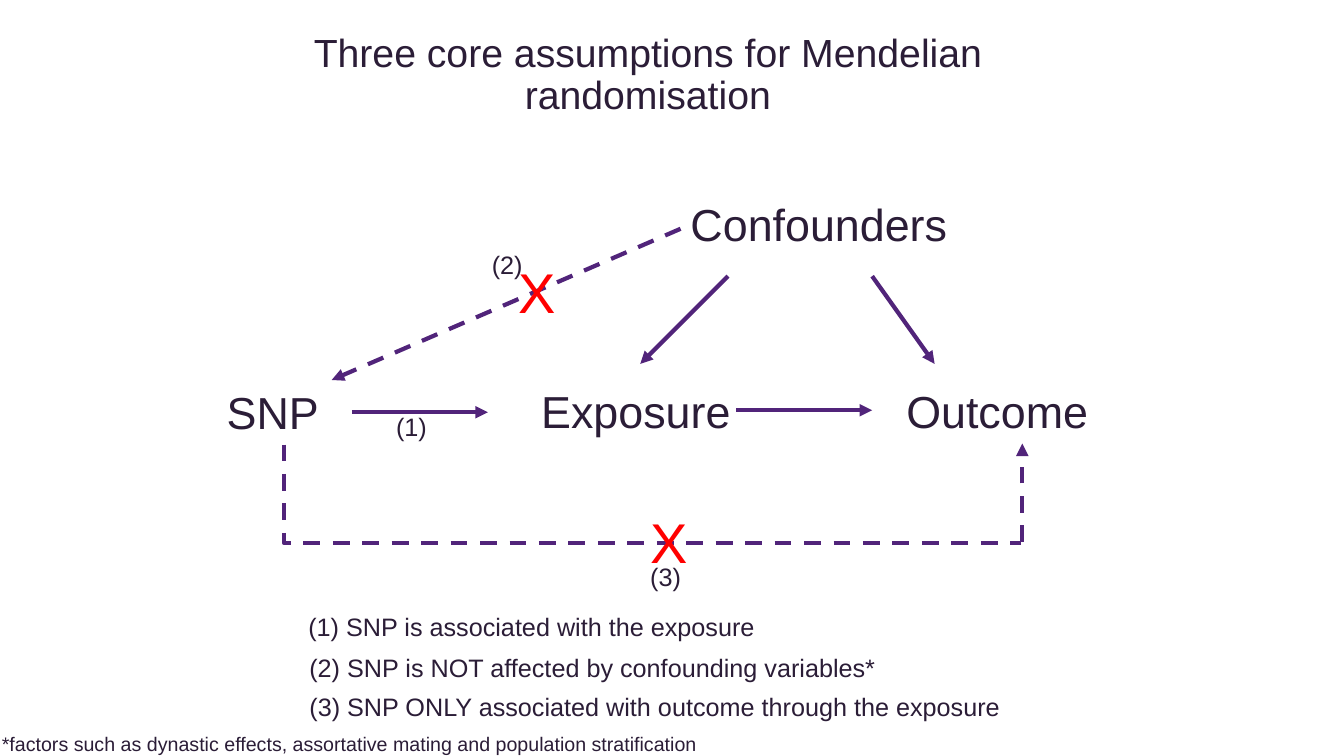
"""Build a slide showing the three core assumptions for Mendelian randomisation."""
import pptx
import pptx.dml.color
import pptx.enum.dml
import pptx.enum.shapes
import pptx.enum.text
import pptx.oxml
import pptx.oxml.ns
import pptx.util
from pptx.util import Inches

TITLE = ("Three core assumptions for Mendelian randomisation", 1.94, 0.33, 8.97, 1.25)
VARIABLES = [
    ("SNP", 2.15, 3.77, 1.34, 0.64),
    ("Exposure", 5.27, 3.76, 2.26, 0.64),
    ("Outcome", 8.89, 3.76, 2.11, 0.64),
    ("Confounders", 6.75, 1.9, 3.08, 0.64),
]
CAUSAL_ARROWS = [
    ((3.49, 4.09), (4.84, 4.09)),
    ((7.3, 4.07), (8.65, 4.07)),
    ((7.22, 2.74), (6.35, 3.61)),
    ((8.65, 2.74), (9.27, 3.61)),
]
RULED_OUT_ARROWS = [
    ((6.75, 2.27), (3.29, 3.77)),
    ((10.14, 5.38), (10.14, 4.4)),
]
RULED_OUT_BEND = [(2.82, 4.41), (2.82, 5.39), (10.13, 5.39)]
NOTES = [
    ("(1) SNP is associated with the exposure", 2.96, 6.02, 4.67, 0.4),
    ("(2) SNP is NOT affected by confounding variables*", 2.97, 6.42, 5.87, 0.4),
    ("(3) SNP ONLY associated with outcome through the exposure", 2.97, 6.81, 7.12, 0.4),
    ("(2)", 4.78, 2.42, 0.51, 0.4),
    ("(1)", 3.83, 4.03, 0.51, 0.4),
    ("(3)", 6.35, 5.52, 0.51, 0.4),
]
CROSSES = [("X", 5.04, 2.51, 0.49, 0.77), ("X", 6.35, 4.99, 0.49, 0.77)]
FOOTNOTE = (
    "*factors such as dynastic effects, assortative mating and population stratification",
    -0.08, 7.21, 7.13, 0.34,
)

THEME = {
    "font": "Arial",
    "ink": "2B1D37",
    "arrow": "51247A",
    "cross": "FF0000",
    "title_size": 28,
    "variable_size": 32,
    "note_size": 18,
    "cross_size": 40,
    "footnote_size": 14,
    "line_width": 3,
}


def rgb(name):
    return pptx.dml.color.RGBColor.from_string(THEME[name])


def add_label(slide, label, size, color="ink", wrap=False):
    text, left, top, width, height = label
    box = slide.shapes.add_textbox(*map(Inches, (left, top, width, height)))
    box.text_frame.word_wrap = wrap
    paragraph = box.text_frame.paragraphs[0]
    paragraph.text = text
    paragraph.font.name = THEME["font"]
    paragraph.font.size = pptx.util.Pt(THEME[size])
    paragraph.font.color.rgb = rgb(color)
    return box.text_frame


def style_line(line, dashed):
    line.color.rgb = rgb("arrow")
    line.width = pptx.util.Pt(THEME["line_width"])
    if dashed:
        line.dash_style = pptx.enum.dml.MSO_LINE.DASH


def add_arrow(slide, start, end, dashed=False):
    arrow = slide.shapes.add_connector(
        pptx.enum.shapes.MSO_CONNECTOR.STRAIGHT, *map(Inches, start + end))
    style_line(arrow.line, dashed)
    head = pptx.oxml.parse_xml(
        f'<a:tailEnd {pptx.oxml.ns.nsdecls("a")} type="triangle"/>')
    arrow.line._get_or_add_ln().append(head)
    arrow._element.spPr.append(
        pptx.oxml.parse_xml(f'<a:effectLst {pptx.oxml.ns.nsdecls("a")}/>'))


def add_bend(slide, points):
    corners = [tuple(map(Inches, point)) for point in points]
    builder = slide.shapes.build_freeform(*corners[0])
    builder.add_line_segments(corners[1:], close=False)
    bend = builder.convert_to_shape()
    bend.fill.background()
    bend.shadow.inherit = False
    style_line(bend.line, dashed=True)


def main():
    deck = pptx.Presentation()
    deck.slide_width, deck.slide_height = Inches(13.33), Inches(7.5)
    slide = deck.slides.add_slide(deck.slide_layouts[6])

    for variable in VARIABLES:
        add_label(slide, variable, "variable_size", wrap=True)
    for start, end in CAUSAL_ARROWS:
        add_arrow(slide, start, end)
    for note in NOTES:
        add_label(slide, note, "note_size")
    add_bend(slide, RULED_OUT_BEND)
    for start, end in RULED_OUT_ARROWS:
        add_arrow(slide, start, end, dashed=True)

    title = add_label(slide, TITLE, "title_size", wrap=True)
    title.margin_left = title.margin_right = title.margin_top = title.margin_bottom = 0
    title.paragraphs[0].alignment = pptx.enum.text.PP_ALIGN.CENTER
    title.paragraphs[0].line_spacing = 0.9

    for cross in CROSSES:
        add_label(slide, cross, "cross_size", color="cross")
    add_label(slide, FOOTNOTE, "footnote_size")
    deck.save("out.pptx")


if __name__ == "__main__":
    main()
